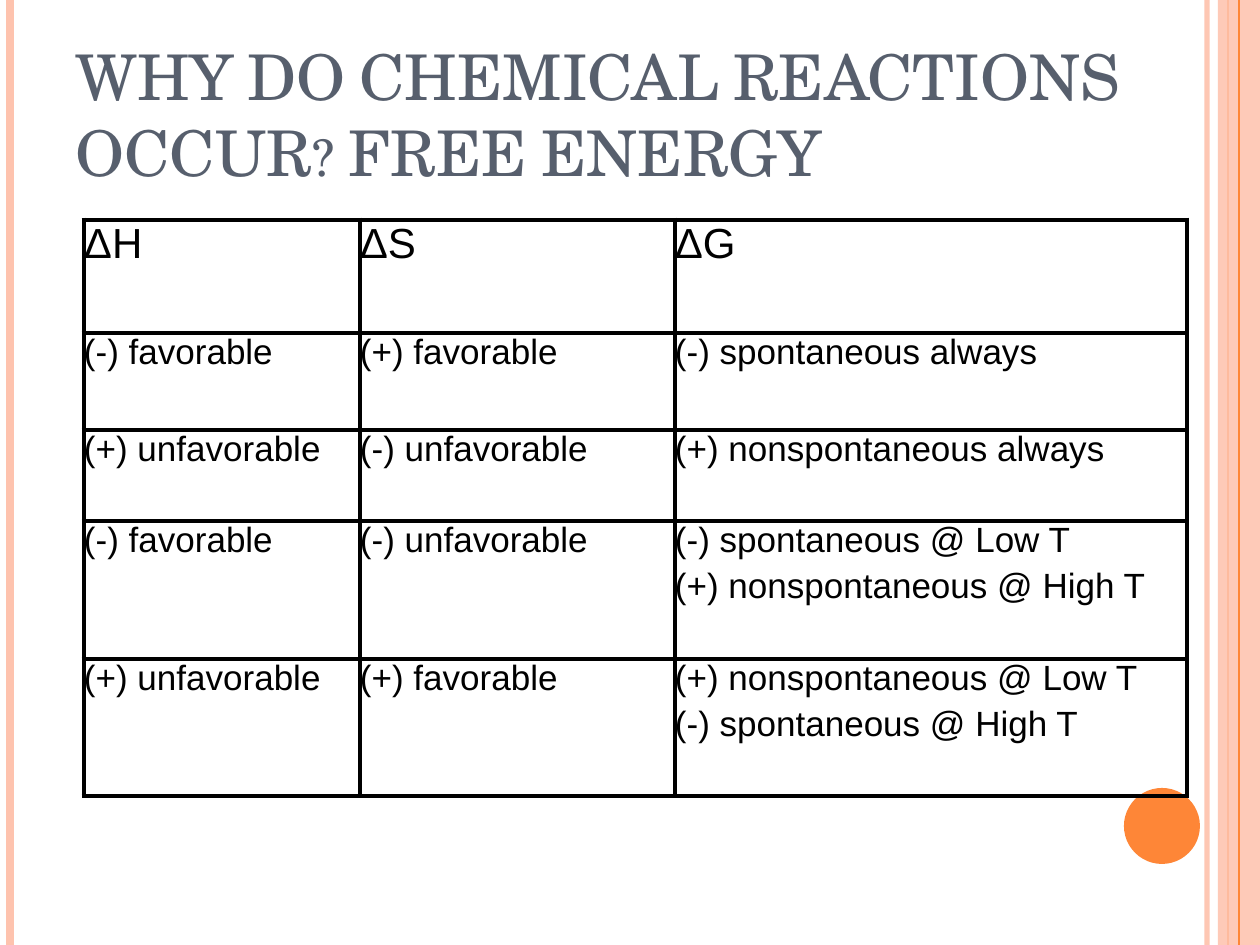
from lxml import etree
from pptx import Presentation
from pptx import util as u
from pptx.dml.color import RGBColor
from pptx.enum import shapes, text
from pptx.oxml.ns import qn

SCALE = 914400 / 126  # EMU per px
ORANGE = RGBColor(0xFE, 0x86, 0x37)
PEACH = RGBColor(0xFE, 0xC3, 0xAE)
SLATE = RGBColor(0x57, 0x5F, 0x6D)
BLACK = RGBColor(0, 0, 0)
WIDTH, HEIGHT = 1260, 945


def px(*lengths):
    return [u.Emu(round(length * SCALE)) for length in lengths]


def set_alpha(fill_parent, percent):
    color = next(fill_parent.iter(qn("a:srgbClr")))
    etree.SubElement(color, qn("a:alpha")).set("val", str(percent * 1000))


presentation = Presentation()
presentation.slide_width, presentation.slide_height = px(WIDTH, HEIGHT)
slide = presentation.slides.add_slide(presentation.slide_layouts[6])

# Side band, placed among the vertical rules
rules = [(1207, PEACH, 3, 93), (10, PEACH, 4.5, 100), (1228, ORANGE, 1.5, 100),
         None, (1239, ORANGE, 0.75, 100)]
for rule in rules:
    if rule is None:
        band = slide.shapes.add_shape(shapes.MSO_SHAPE.RECTANGLE, *px(1218, 0, 42, HEIGHT))
        band.shadow.inherit = False
        band.fill.solid()
        band.fill.fore_color.rgb = PEACH
        band.line.fill.background()
        set_alpha(band._element.spPr, 87)
        continue
    x, color, weight, alpha = rule
    line = slide.shapes.add_connector(shapes.MSO_CONNECTOR.STRAIGHT, *px(x, 0, x, HEIGHT))
    line.line.color.rgb = color
    line.line.width = u.Pt(weight)
    if alpha < 100:
        set_alpha(line._element.spPr, alpha)
    etree.SubElement(line._element.spPr, qn("a:effectLst"))

# Corner disc
disc = slide.shapes.add_shape(shapes.MSO_SHAPE.OVAL, *px(1124, 788, 76, 76))
disc.shadow.inherit = False
disc.fill.solid()
disc.fill.fore_color.rgb = ORANGE
disc.line.fill.background()

# Title
title = slide.shapes.add_textbox(*px(63, 38, 1134, 157))
title.text_frame.word_wrap = True
title.text_frame.vertical_anchor = text.MSO_ANCHOR.BOTTOM
run = title.text_frame.paragraphs[0].add_run()
run.text = "WHY DO CHEMICAL REACTIONS OCCUR? FREE ENERGY"
for name, value in {"name": "TeX Gyre Schola", "size": u.Pt(36)}.items():
    setattr(run.font, name, value)
run.font.color.rgb = SLATE
run.font._element.set("cap", "small")

# Free energy table
rows = [
    ("ΔH", "ΔS", "ΔG"),
    ("(-) favorable", "(+) favorable", "(-) spontaneous always"),
    ("(+) unfavorable", "(-) unfavorable", "(+) nonspontaneous always"),
    ("(-) favorable", "(-) unfavorable",
     "(-) spontaneous @ Low T\n(+) nonspontaneous @ High T"),
    ("(+) unfavorable", "(+) favorable",
     "(+) nonspontaneous @ Low T\n(-) spontaneous @ High T"),
]
column_widths = [276, 315, 512]
row_heights = [113, 97, 91, 138, 137]
table = slide.shapes.add_table(
    len(rows), len(column_widths),
    *px(84, 220, sum(column_widths), sum(row_heights))).table
table.first_row = table.horz_banding = False
for column, width in zip(table.columns, px(*column_widths)):
    column.width = width
for row, height in zip(table.rows, px(*row_heights)):
    row.height = height

cell_format = {"margin_left": 0, "margin_top": 0, "margin_right": 0, "margin_bottom": 0,
               "vertical_anchor": text.MSO_ANCHOR.TOP}
for i, labels in enumerate(rows):
    for j, label in enumerate(labels):
        cell = table.cell(i, j)
        cell.text = label
        for name, value in cell_format.items():
            setattr(cell, name, value)
        for k, paragraph in enumerate(cell.text_frame.paragraphs):
            paragraph.space_before = u.Pt(4 if k else 0)
            font_format = {"name": "Arial", "size": u.Pt(20 if i else 24), "bold": False}
            for name, value in font_format.items():
                setattr(paragraph.runs[0].font, name, value)
            paragraph.runs[0].font.color.rgb = BLACK
        # Borders come before the fill in the cell properties
        properties = cell._tc.get_or_add_tcPr()
        for side in ("lnL", "lnR", "lnT", "lnB"):
            border = etree.SubElement(properties, qn(f"a:{side}"), w=str(u.Pt(3)))
            fill = etree.SubElement(border, qn("a:solidFill"))
            etree.SubElement(fill, qn("a:srgbClr"), val=str(BLACK))
        cell.fill.background()

presentation.save("out.pptx")
